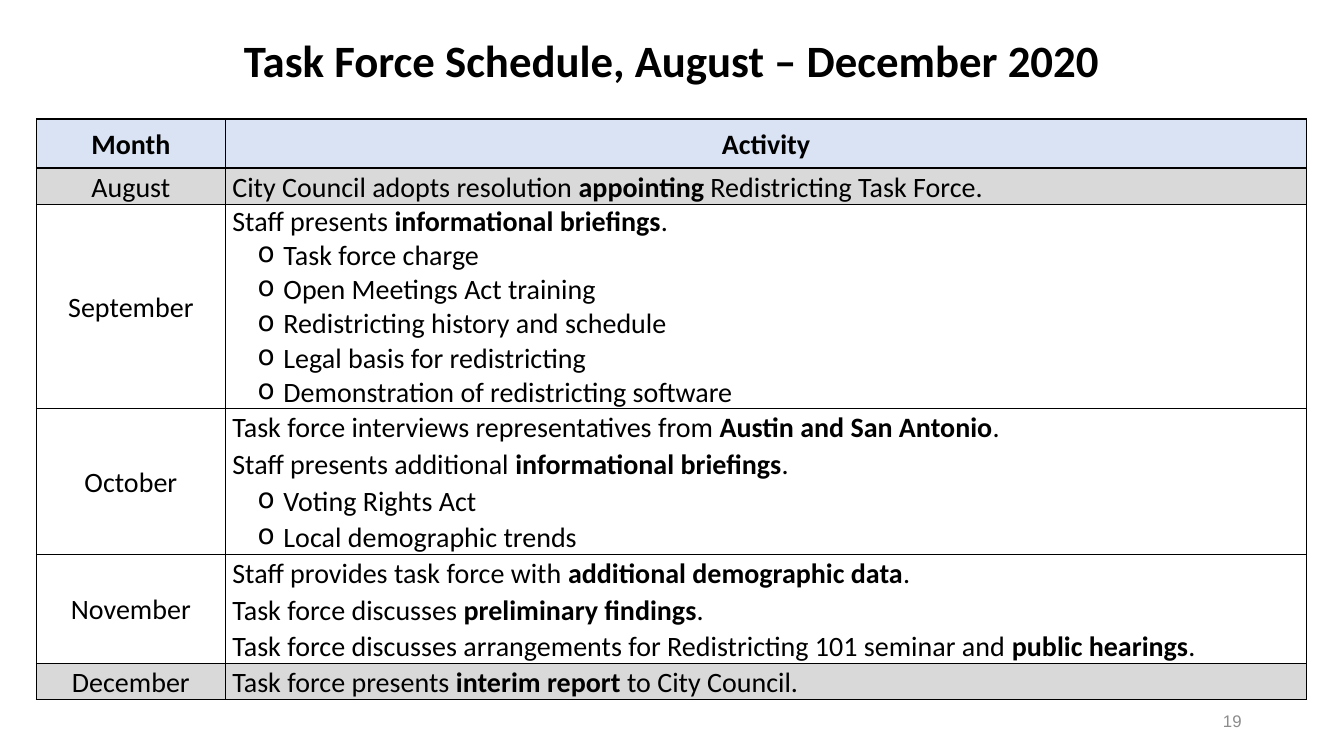
from lxml.etree import SubElement
from pptx import Presentation
from pptx.dml.color import RGBColor
from pptx.enum.text import MSO_ANCHOR as Anchor, PP_ALIGN as Align
from pptx.oxml.ns import qn
from pptx.util import Pt

BLACK = RGBColor(0x00, 0x00, 0x00)
GRAY = RGBColor(0x8C, 0x8C, 0x8C)
HEADER_BLUE = RGBColor(0xDA, 0xE3, 0xF3)
COUNCIL_GRAY = RGBColor(0xD9, 0xD9, 0xD9)

TITLE_FONT = {"name": "Calibri", "size": Pt(32), "bold": True}
NUMBER_FONT = {"name": "Arial", "size": Pt(12), "bold": False}
CELL_FONT = {"name": "Calibri", "size": Pt(20), "bold": False}
MARGINS = {"margin_left": Pt(5), "margin_right": Pt(5), "margin_top": 0, "margin_bottom": 0}

# Month, row height, fill, line spacing, activities (*bold*, "- " for a bullet)
SCHEDULE = [
    ("*Month*", 35, HEADER_BLUE, 1.07, ["*Activity*"]),
    ("August", 26, COUNCIL_GRAY, 1.07,
     ["City Council adopts resolution *appointing* Redistricting Task Force."]),
    ("September", 146, None, 1.0,
     ["Staff presents *informational briefings*.",
      "- Task force charge",
      "- Open Meetings Act training",
      "- Redistricting history and schedule",
      "- Legal basis for redistricting",
      "- Demonstration of redistricting software"]),
    ("October", 104, None, 1.07,
     ["Task force interviews representatives from *Austin and San Antonio*.",
      "Staff presents additional *informational briefings*.",
      "- Voting Rights Act",
      "- Local demographic trends"]),
    ("November", 78, None, 1.07,
     ["Staff provides task force with *additional demographic data*.",
      "Task force discusses *preliminary findings*.",
      "Task force discusses arrangements for Redistricting 101 seminar and *public hearings*."]),
    ("December", 26, COUNCIL_GRAY, 1.07,
     ["Task force presents *interim report *to City Council."]),
]


def write_runs(paragraph, text, font_values, color):
    """Add text to a paragraph, with the parts between asterisks in bold."""
    for index, part in enumerate(text.split("*")):
        if not part:
            continue
        run = paragraph.add_run()
        run.text = part
        for name, value in font_values.items():
            setattr(run.font, name, value)
        if index % 2:
            run.font.bold = True
        run.font.color.rgb = color


def fill_cell(cell, lines, alignment, spacing, color):
    """Write the lines of a cell and set its margins, borders and fill."""
    for name, value in MARGINS.items():
        setattr(cell, name, value)
    cell.vertical_anchor = Anchor.MIDDLE
    for index, line in enumerate(lines):
        frame = cell.text_frame
        paragraph = frame.add_paragraph() if index else frame.paragraphs[0]
        paragraph.alignment = alignment
        paragraph.line_spacing = spacing
        if line.startswith("- "):
            properties = paragraph._p.get_or_add_pPr()
            properties.set("marL", str(Pt(36.5)))
            properties.set("indent", str(-Pt(18.5)))
            SubElement(properties, qn("a:buChar"), char="o")
        write_runs(paragraph, line.removeprefix("- "), CELL_FONT, BLACK)
    cell_properties = cell._tc.get_or_add_tcPr()
    for side in ("a:lnL", "a:lnR", "a:lnT", "a:lnB"):
        border = SubElement(cell_properties, qn(side), w=str(Pt(1)))
        border_fill = SubElement(border, qn("a:solidFill"))
        SubElement(border_fill, qn("a:srgbClr"), val=str(BLACK))
    if color is None:
        cell.fill.background()
    else:
        cell.fill.solid()
        cell.fill.fore_color.rgb = color


presentation = Presentation()
presentation.slide_width = Pt(960)
presentation.slide_height = Pt(540)
slide = presentation.slides.add_slide(presentation.slide_layouts[6])

# Title and page number
for text, box, alignment, font_values, color, spacing in [
    ("Task Force Schedule, August – December 2020", (26, 23, 908, 44),
     Align.CENTER, TITLE_FONT, BLACK, 0.9),
    ("19", (678, 500.5, 216, 28.75), Align.RIGHT, NUMBER_FONT, GRAY, 1.0),
]:
    frame = slide.shapes.add_textbox(*map(Pt, box)).text_frame
    frame.word_wrap = True
    frame.vertical_anchor = Anchor.MIDDLE
    paragraph = frame.paragraphs[0]
    paragraph.alignment = alignment
    paragraph.line_spacing = spacing
    write_runs(paragraph, text, font_values, color)

# Schedule table
total_height = sum(row[1] for row in SCHEDULE)
table = slide.shapes.add_table(
    len(SCHEDULE), 2, Pt(26), Pt(85), Pt(907.5), Pt(total_height)).table
table.first_row = False
table.horz_banding = False
table.columns[0].width = Pt(135)
table.columns[1].width = Pt(772.5)

for index, (month, height, color, spacing, activities) in enumerate(SCHEDULE):
    table.rows[index].height = Pt(height)
    fill_cell(table.cell(index, 0), [month], Align.CENTER, 1.07, color)
    alignment = Align.LEFT if index else Align.CENTER
    fill_cell(table.cell(index, 1), activities, alignment, spacing, color)

presentation.save("out.pptx")
